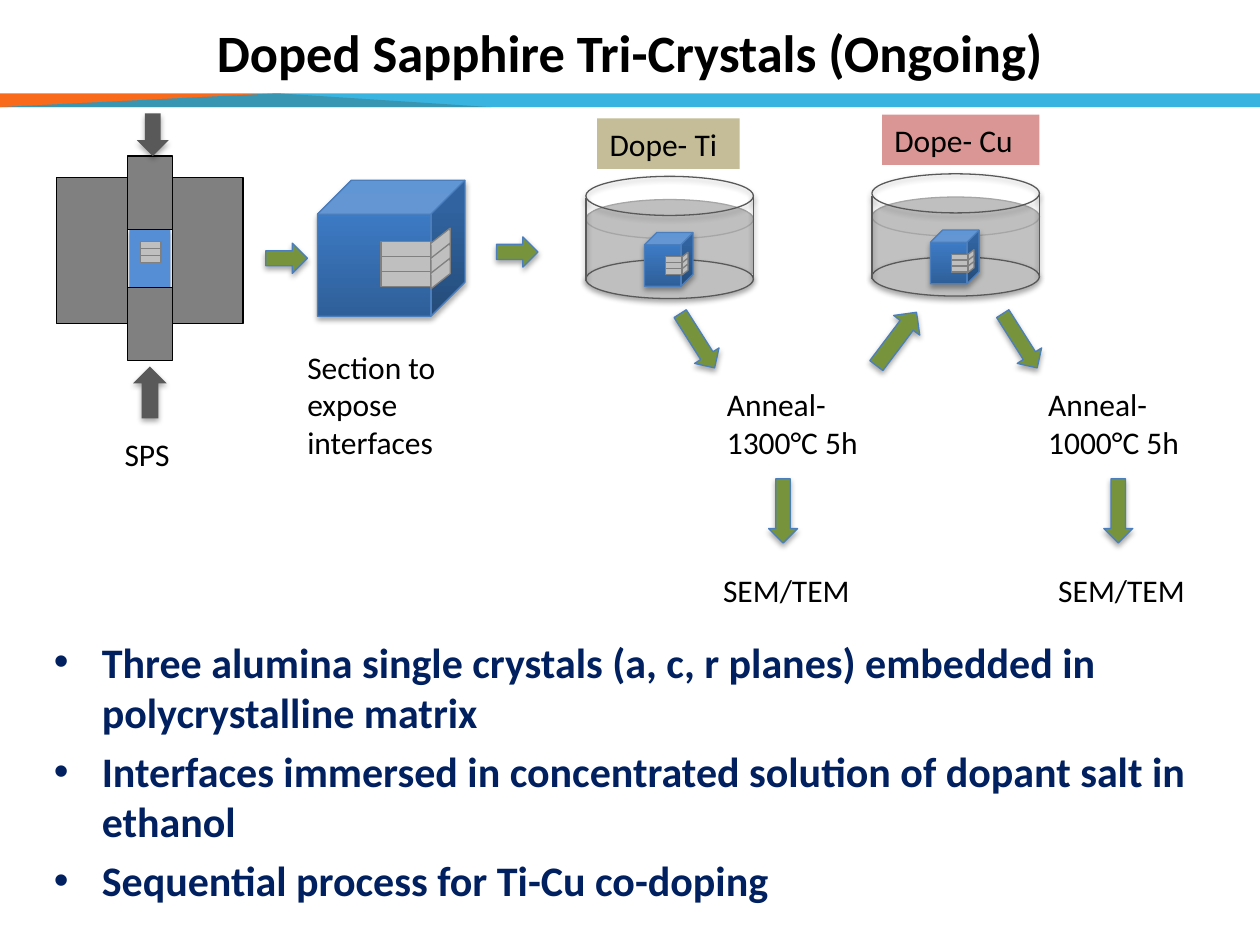
from copy import deepcopy
from lxml.etree import SubElement as Sub
from pptx import Presentation
from pptx.dml.color import RGBColor as RGB
from pptx.enum.shapes import MSO_CONNECTOR as Conn, MSO_SHAPE as Kind
from pptx.enum.text import MSO_ANCHOR as Anchor, PP_ALIGN as Align
from pptx.oxml.ns import qn
from pptx.util import Inches, Pt

COLS, ROWS = 100, 75
CELL = Inches(10) // COLS
FONT = "Calibri"
BLACK, NAVY = RGB(0, 0, 0), RGB(0x00, 0x20, 0x60)
GRAY, DARK = RGB(0x80, 0x80, 0x80), RGB(0x59, 0x59, 0x59)
PALE, MID = RGB(0xBF, 0xBF, 0xBF), RGB(0xA6, 0xA6, 0xA6)
CORE, EDGE = RGB(0x55, 0x8E, 0xD5), RGB(0x4B, 0x7E, 0xBC)
GREEN, TAN, ROSE = RGB(0x77, 0x93, 0x3C), RGB(0xC4, 0xBD, 0x97), RGB(0xD9, 0x96, 0x94)
FLAME, SKY = RGB(0xF9, 0x6A, 0x1B), RGB(0x08, 0xA1, 0xD9)
BLUES = [(0, RGB(0x2F, 0x5F, 0x99)), (0.8, RGB(0x3D, 0x7C, 0xC7)), (1, RGB(0x3A, 0x7C, 0xCB))]


def emu(*cells):
    """Turn grid cells into slide lengths."""
    return [round(c * CELL) for c in cells]


def part(box, x, y, w, h):
    """Give the box that takes these shares of a larger box."""
    left, top, wide, high = box
    return left + x * wide, top + y * high, w * wide, h * high


def fade(shape, share):
    """Make a solid fill see-through."""
    color = shape._element.spPr.find(qn("a:solidFill"))[0]
    Sub(color, qn("a:alpha"), val=str(share * 1000))


def shade(props, share, dist):
    """Add a soft shadow that falls straight down."""
    effect = props.find(qn("a:effectLst"))
    if effect is None:
        effect = Sub(props, qn("a:effectLst"))
    glow = Sub(effect, qn("a:outerShdw"), blurRad="40000", dist=str(dist),
               dir="5400000", rotWithShape="0")
    color = Sub(glow, qn("a:srgbClr"), val="000000")
    Sub(color, qn("a:alpha"), val=str(share * 1000))


def paint(shape, fill=None, line=None, soft=False):
    """Set the fill, line and shadow of a shape."""
    shape.shadow.inherit = False
    if fill is None:
        shape.fill.background()
    else:
        shape.fill.solid()
        shape.fill.fore_color.rgb = fill
    if line is None:
        shape.line.fill.background()
    else:
        shape.line.color.rgb = line
        shape.line.width = Pt(0.75)
    if soft:
        shade(shape._element.spPr, 35, 23000)
    return shape


def draw(page, kind, box, fill=None, line=None, soft=False, turn=0):
    """Place one preset shape."""
    shape = page.shapes.add_shape(kind, *emu(*box))
    shape.rotation = turn
    return paint(shape, fill, line, soft)


def write(para, text, size, color=BLACK, bold=False):
    """Add one run to a paragraph."""
    run = para.add_run()
    run.text = text
    font = run.font
    font.name, font.size, font.bold = FONT, Pt(size), bold
    font.color.rgb = color


def frame(page, box):
    """Place an empty text box that wraps."""
    text = page.shapes.add_textbox(*emu(*box)).text_frame
    text.word_wrap = True
    return text


def label(page, box, text):
    """Place a caption of the diagram."""
    write(frame(page, box).paragraphs[0], text, 18)


def tag(page, box, text, fill):
    """Place a caption on a coloured plate."""
    body = draw(page, Kind.RECTANGLE, box, fill).text_frame
    body.word_wrap = True
    body.vertical_anchor = Anchor.TOP
    body.paragraphs[0].alignment = Align.LEFT
    write(body.paragraphs[0], text, 18)


def head(page, box):
    """Place the title."""
    text = frame(page, box)
    text.vertical_anchor = Anchor.MIDDLE
    text.paragraphs[0].alignment = Align.CENTER
    write(text.paragraphs[0], "Doped Sapphire Tri-Crystals (Ongoing)", 30, bold=True)


def band(page, box):
    """Draw the two-colour strip under the title."""
    x, y, w, h = box
    low, peak = y + h, x + 0.22 * w
    flame = [(x, y), (peak, y), (x + 0.39 * w, low), (x, low)]
    sky = [(x, low), (peak, y), (x + w, y), (x + w, low)]
    for dots, fill in ((flame, FLAME), (sky, SKY)):
        first, *rest = [emu(*dot) for dot in dots]
        build = page.shapes.build_freeform(*first)
        build.add_line_segments(rest, close=True)
        shape = paint(build.convert_to_shape(), fill)
    fade(shape, 80)


def stack(page, box):
    """Draw three chips, one above the other."""
    for i in range(3):
        draw(page, Kind.RECTANGLE, part(box, 0, i / 3, 1, 1 / 3), PALE, GRAY)


def press(page, box):
    """Draw the die, its punches and the sample inside."""
    draw(page, Kind.RECTANGLE, part(box, 0.39, 0.38, 0.22, 0.19), CORE, soft=True)
    for y in (0.14, 0.57):
        draw(page, Kind.RECTANGLE, part(box, 0.38, y, 0.24, 0.24), GRAY, BLACK)
    for x in (0.62, 0):
        draw(page, Kind.RECTANGLE, part(box, x, 0.21, 0.38, 0.48), GRAY, BLACK)
    stack(page, part(box, 0.45, 0.42, 0.11, 0.07))
    draw(page, Kind.DOWN_ARROW, part(box, 0.43, 0, 0.17, 0.14), DARK, soft=True)
    draw(page, Kind.UP_ARROW, part(box, 0.41, 0.83, 0.18, 0.17), DARK, soft=True)


def block(page, box):
    """Draw the cut cube with chips that wrap its corner."""
    cube = draw(page, Kind.CUBE, box, line=EDGE, soft=True)
    cube.fill.gradient()
    cube.fill.gradient_angle = 90
    stops = cube._element.spPr.find(qn("a:gradFill")).find(qn("a:gsLst"))
    stops.append(deepcopy(stops[0]))
    for stop, (place, color) in zip(cube.fill.gradient_stops, BLUES):
        stop.position = place
        stop.color.rgb = color
    stack(page, part(box, 0.43, 0.45, 0.34, 0.33))
    for i in range(3):
        flap = part(box, 0.72, 0.42 + 0.11 * i, 0.23, 0.09)
        draw(page, Kind.PARALLELOGRAM, flap, PALE, GRAY, turn=321.8).adjustments[0] = 0.77


def jar(page, box):
    """Draw a dish of solution with a cube in it."""
    fade(draw(page, Kind.RECTANGLE, part(box, 0, 0.33, 1, 0.47), DARK), 37)
    draw(page, Kind.OVAL, part(box, 0, 0.68, 1, 0.32), PALE, DARK, True)
    draw(page, Kind.OVAL, part(box, 0, 0.19, 1, 0.32), PALE, MID)
    block(page, part(box, 0.35, 0.46, 0.29, 0.44))
    draw(page, Kind.OVAL, part(box, 0, 0, 1, 0.32), line=DARK, soft=True)
    for side, top in ((1, 0.16), (0, 0.18)):
        x, y, _, h = part(box, side, top, 0, 0.68)
        wall = page.shapes.add_connector(Conn.STRAIGHT, *emu(x, y, x, y + h))
        wall.line.color.rgb = DARK
        wall.line.width = Pt(1)
        shade(wall._element.spPr, 38, 20000)


def notes(page, box, lines):
    """Write the bullet list."""
    text = frame(page, box)
    for i, line in enumerate(lines):
        para = text.add_paragraph() if i else text.paragraphs[0]
        props = para._p.get_or_add_pPr()
        props.set("marL", str(Inches(0.38)))
        props.set("indent", str(-Inches(0.38)))
        Sub(props, qn("a:buFont"), typeface="Arial")
        Sub(props, qn("a:buChar"), char="•")
        if i:
            para.space_before = Pt(4.8)
        write(para, line, 24, NAVY, True)


def main():
    """Build the slide."""
    deck = Presentation()
    deck.slide_width, deck.slide_height = emu(COLS, ROWS)
    page = deck.slides.add_slide(deck.slide_layouts[6])
    band(page, (0, 7.4, COLS, 1.1))
    head(page, (5, 0.1, 90, 8))
    press(page, (4.5, 9, 14.8, 24.2))
    block(page, (25.2, 14.3, 11.7, 10.8))
    for x, y in ((46.5, 14), (69.2, 13.8)):
        jar(page, (x, y, 13.3, 9.7))
    for x, y, w, h, turn in (
            (21.1, 19.3, 3.3, 2.4, 0), (39.4, 18.8, 3.3, 2.4, 0),
            (68.5, 25.6, 5.3, 2.6, 307), (52.8, 25.9, 5.1, 2.3, 57.6),
            (78.4, 25.9, 5.1, 2.3, 57.6), (86.2, 39.4, 5.1, 2.3, 90),
            (59.6, 39.4, 5.1, 2.3, 90)):
        draw(page, Kind.RIGHT_ARROW, (x, y, w, h), GREEN, EDGE, True, turn)
    label(page, (8.9, 34, 6.2, 4), "SPS")
    label(page, (23.4, 27.1, 12.8, 10.1), "Section to expose interfaces")
    tag(page, (47.4, 9.4, 11.3, 4), "Dope- Ti", TAN)
    tag(page, (70, 9.1, 12.5, 4), "Dope- Cu", ROSE)
    for x, heat, end in ((56.7, 1300, 56.4), (82.2, 1000, 83)):
        label(page, (x, 30.1, 12.5, 7.1), f"Anneal- {heat}°C 5h")
        label(page, (end, 44.8, 12.5, 4), "SEM/TEM")
    notes(page, (3.3, 50, 95.6, 22.5), (
        "Three alumina single crystals (a, c, r planes) embedded in polycrystalline matrix",
        "Interfaces immersed in concentrated solution of dopant salt in ethanol",
        "Sequential process for Ti-Cu co-doping"))
    deck.save("out.pptx")


if __name__ == "__main__":
    main()
